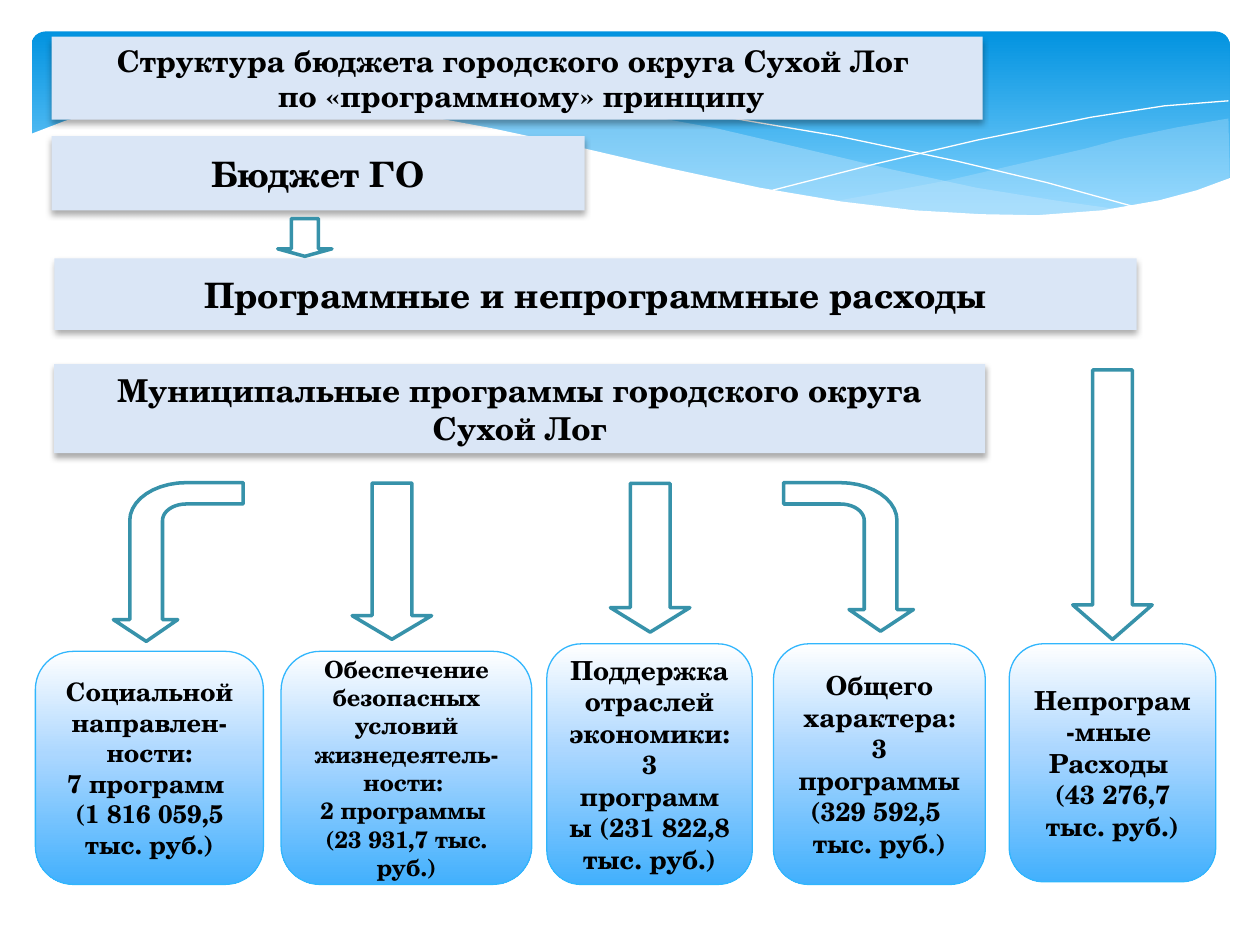
import math

import pptx
import pptx.dml.color
import pptx.enum.shapes
import pptx.enum.text
import pptx.oxml
import pptx.oxml.ns
import pptx.util

Pt = pptx.util.Pt
RGB = pptx.dml.color.RGBColor.from_string
qn = pptx.oxml.ns.qn
SHAPE = pptx.enum.shapes.MSO_SHAPE

THEME = {
    "font": "TeX Gyre Schola",
    "text": "000000",
    "white": "FFFFFF",
    "banner": "DAE6F6",
    "card_line": "31B6FD",
    "arrow_line": "3792AA",
    "veil": "C6E7FC",
    "header_stops": [(0, "0293E0"), (90, "83D3FE")],
    "card_stops": [(0, "FFFFFF"), (44, "ACD7FF"), (100, "42B0FD")],
    "title_size": 17,
    "heading_size": 20,
    "group_size": 18,
}

HEADER_BOX = (18, 18, 684.7, 112.3)
VEILS = [
    (29, [(702, 67.7), (673, 72.7), (641.5, 79.2), (620, 85), (579.6, 94.3), (542, 103),
          (508, 109.4), (476, 115.2), (517.7, 119.5), (553, 122.4), (586, 123.8),
          (615, 122.4), (640, 119.5), (662.4, 115.2), (683.3, 109.4), (702.7, 101.5)]),
    (40, [(643, 120.2), (602.6, 114.5), (558, 107.3), (508, 96.5), (453, 83.5), (409.7, 73.4),
          (370, 66.2), (334.8, 62), (302.4, 59), (273.6, 57.6), (247.7, 57.6), (225.4, 59),
          (206, 62), (246.2, 67.7), (291, 76.3), (323.3, 83.5), (381.6, 97.2), (432.7, 108),
          (478.8, 116), (520.6, 121), (556.6, 123.8), (589, 124.6), (617, 123)]),
]
HAIRLINES = [
    [(222.5, 64.8), (247.7, 60.5), (278.6, 59), (324, 59), (367.2, 62), (419, 67.7),
     (478.8, 77.8), (547.2, 92.2), (598.3, 104.4), (653, 119.5)],
    [(441.4, 108.7), (500.4, 93.6), (558.7, 80), (623.5, 67), (665.3, 60.5), (702, 57.6)],
]
WAVE_EDGE = [
    (16.6, 77), (37.4, 69), (68.4, 61.2), (105, 57), (139, 56.2), (180, 58.3), (227.5, 63.4),
    (281.5, 73.4), (321.8, 82), (381, 95.8), (434.2, 107.3), (481, 115.2), (522.7, 120.2),
    (560.2, 122.4), (592.6, 123), (630, 120.2), (662.4, 114.5), (684, 108.7), (703.4, 101.5),
    (703.4, 161.3), (16.6, 161.3),
]

TITLE = ["Структура бюджета городского округа Сухой Лог ", " по «программному» принципу"]
TITLE_BOX = (29.5, 20.9, 532, 47.5)
BANNERS = [
    ((29.5, 77.8, 304.6, 42.5), "heading_size", ["Бюджет ГО"]),
    ((31, 147.6, 618.5, 41), "heading_size", ["Программные и непрограммные расходы"]),
    ((31, 208, 532, 51), "group_size", ["Муниципальные программы городского округа Сухой Лог"]),
]
CARDS = [
    ((20.2, 372.2, 130.3, 133.2), 14.5,
     ["Социальной направлен-", "ности:", "7 программ ", "(1 816 059,5 тыс. руб.)"]),
    ((160.6, 372.2, 143.3, 133.2), 13.5,
     ["Обеспечение безопасных условий жизнедеятель- ности: ", "2 программы ",
      "(23 931,7 тыс. руб.)"]),
    ((312.5, 367.9, 117.4, 137.5), 15,
     ["Поддержка отраслей экономики:", "3 программы (231 822,8 тыс. руб.)"]),
    ((442, 367.9, 121, 137.5), 15,
     ["Общего характера:", "3 программы (329 592,5 ", "тыс. руб.)"]),
    ((576.7, 367.9, 118, 136), 15,
     ["Непрограм-мные ", "Расходы ", "(43 276,7", "тыс. руб.)"]),
]
DOWN_ARROWS = [
    ((163.4, 120.2, 21.6, 31), 0.198),
    ((179.3, 298, 89.3, 45.4), 0.297),
    ((329, 296, 85, 45.4), 0.308),
    ((558.7, 265.7, 154, 45.4), 0.435),
]
BENT_ARROWS = [(139, -1, 366.5), (447.8, 1, 360.7)]


def apply(target, values):
    for name, value in values.items():
        setattr(target, name, value)


def place(shape, box):
    apply(shape, dict(zip(("left", "top", "width", "height"), map(Pt, box))))


def paint(shape, fill=None, line=None, width=0):
    if fill:
        shape.fill.solid()
        shape.fill.fore_color.rgb = RGB(fill)
    else:
        shape.fill.background()
    if line:
        shape.line.color.rgb = RGB(line)
        shape.line.width = Pt(width)
    else:
        shape.line.fill.background()
    shape.shadow.inherit = False


def paint_gradient(shape, stops):
    shape.fill.gradient()
    shape.fill.gradient_angle = 270
    stop_list = shape.element.spPr.find(".//" + qn("a:gsLst"))
    for stop in list(stop_list):
        stop_list.remove(stop)
    for position, color in stops:
        stop = pptx.oxml.ns.nsdecls("a")
        stop_list.append(pptx.oxml.parse_xml(
            f'<a:gs {stop} pos="{position * 1000}"><a:srgbClr val="{color}"/></a:gs>'))


def add_shadow(shape):
    shape.element.spPr.find(qn("a:effectLst")).append(pptx.oxml.parse_xml(
        f'<a:outerShdw {pptx.oxml.ns.nsdecls("a")} blurRad="{Pt(3.5)}" dist="{Pt(2.2)}" '
        'dir="5400000" rotWithShape="0">'
        '<a:srgbClr val="000000"><a:alpha val="32000"/></a:srgbClr></a:outerShdw>'))


def write(shape, lines, size):
    frame = shape.text_frame
    apply(frame, {"word_wrap": True,
                  "auto_size": pptx.enum.text.MSO_AUTO_SIZE.NONE,
                  "vertical_anchor": pptx.enum.text.MSO_ANCHOR.MIDDLE})
    for index, line in enumerate(lines):
        paragraph = frame.add_paragraph() if index else frame.paragraphs[0]
        paragraph.alignment = pptx.enum.text.PP_ALIGN.CENTER
        run = paragraph.add_run()
        run.text = line
        apply(run.font, {"name": THEME["font"], "size": Pt(size), "bold": True})
        run.font.color.rgb = RGB(THEME["text"])


def add_outline(shapes, points, close=True):
    start, *rest = [(Pt(x), Pt(y)) for x, y in points]
    builder = shapes.build_freeform(*start)
    builder.add_line_segments(rest, close=close)
    return builder.convert_to_shape()


def add_preset(shapes, kind, box):
    return shapes.add_shape(kind, *map(Pt, box))


def add_header(shapes):
    sky = add_preset(shapes, SHAPE.ROUNDED_RECTANGLE, HEADER_BOX)
    sky.adjustments[0] = 0.071
    paint(sky)
    paint_gradient(sky, THEME["header_stops"])
    for opacity, points in VEILS:
        veil = add_outline(shapes, points)
        paint(veil, THEME["veil"])
        color = veil.element.spPr.find(qn("a:solidFill"))[0]
        color.append(pptx.oxml.parse_xml(
            f'<a:alpha {pptx.oxml.ns.nsdecls("a")} val="{opacity * 1000}"/>'))
    for points in HAIRLINES:
        paint(add_outline(shapes, points, close=False), line=THEME["white"])
    paint(add_outline(shapes, WAVE_EDGE), THEME["white"])


def fill_banner(banner, lines, size):
    paint(banner, THEME["banner"])
    add_shadow(banner)
    write(banner, lines, size)


def bent_arrow_points(tail, side, tip):
    top, bend_x, bend_y, steps = 275.8, 32.4, 297.4, 10
    turn = [math.pi / 2 * step / steps for step in range(steps + 1)]
    outer = [(bend_x + 32.4 * math.sin(a), bend_y - 21.6 * math.cos(a)) for a in turn]
    inner = [(bend_x + 13.7 * math.cos(a), bend_y - 9.4 * math.sin(a)) for a in turn]
    base = tip - 12.4
    head = [(64.8, base), (74.2, base), (55.4, tip), (37.4, base), (46.1, base)]
    outline = [(0, top), *outer, *head, *inner, (0, 288)]
    return [(tail + side * x, y) for x, y in outline]


def main():
    deck = pptx.Presentation()
    apply(deck, {"slide_width": Pt(720), "slide_height": Pt(540)})
    slide = deck.slides.add_slide(deck.slide_layouts[5])
    shapes = slide.shapes
    add_header(shapes)

    title = shapes.title
    title.element.getparent().append(title.element)
    place(title, TITLE_BOX)
    fill_banner(title, TITLE, THEME["title_size"])
    for box, size, lines in BANNERS:
        fill_banner(add_preset(shapes, SHAPE.RECTANGLE, box), lines, THEME[size])

    for box, head in DOWN_ARROWS:
        arrow = add_preset(shapes, SHAPE.RIGHT_ARROW, box)
        arrow.rotation = 90
        arrow.adjustments[1] = head
        paint(arrow, line=THEME["arrow_line"], width=2)
    for tail, side, tip in BENT_ARROWS:
        arrow = add_outline(shapes, bent_arrow_points(tail, side, tip))
        paint(arrow, line=THEME["arrow_line"], width=2)

    for box, size, lines in CARDS:
        card = add_preset(shapes, SHAPE.ROUNDED_RECTANGLE, box)
        paint(card, line=THEME["card_line"], width=0.75)
        paint_gradient(card, THEME["card_stops"])
        write(card, lines, size)

    deck.save("out.pptx")


if __name__ == "__main__":
    main()
